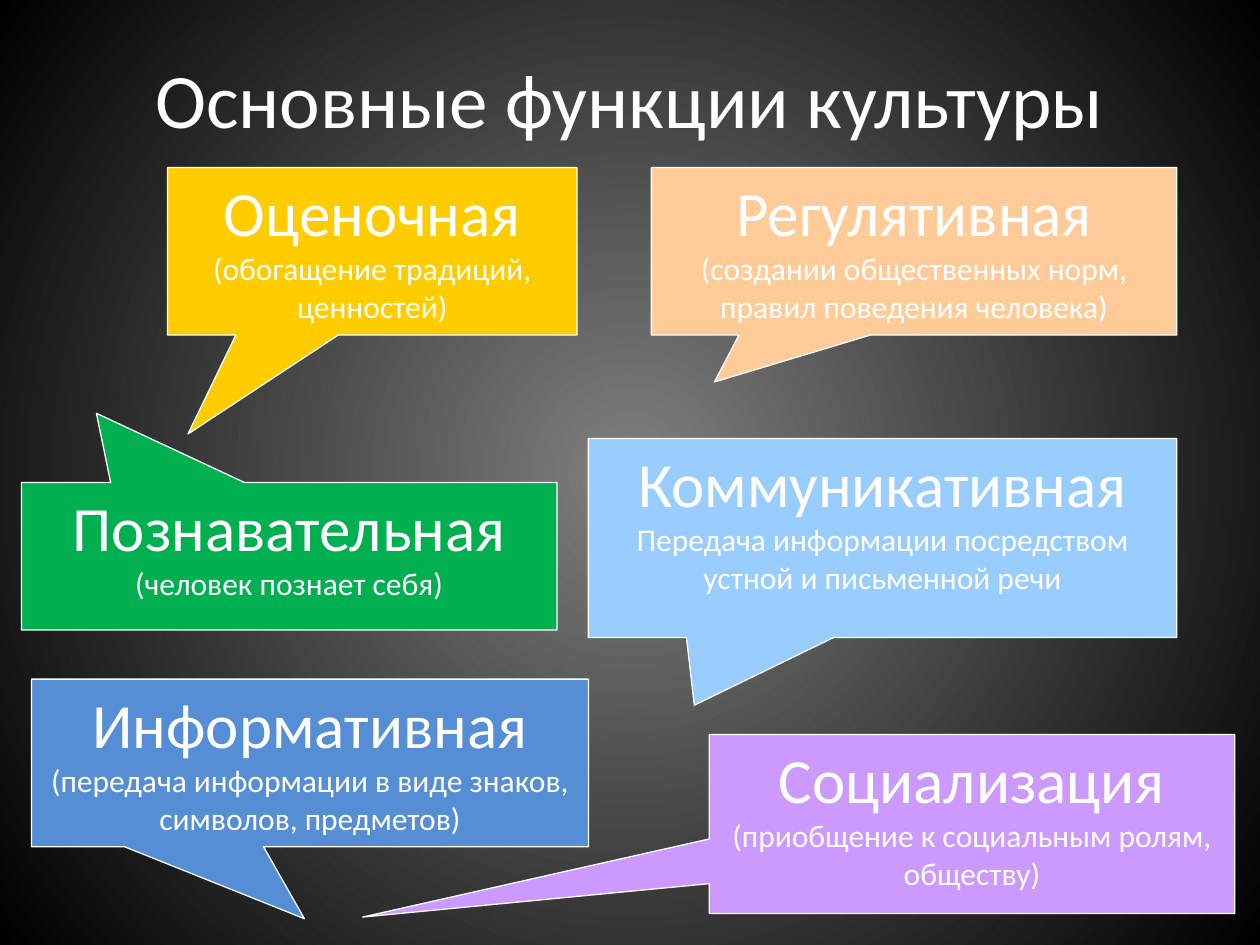
from dataclasses import dataclass

from lxml import etree
from pptx import Presentation
from pptx.dml.color import RGBColor as Rgb
from pptx.enum.shapes import MSO_SHAPE as Shape
from pptx.enum.text import MSO_ANCHOR as Anchor, PP_ALIGN as Align
from pptx.oxml import parse_xml
from pptx.oxml.ns import nsdecls, qn
from pptx.util import Inches, Pt


@dataclass(frozen=True)
class Theme:
    font: str = "Calibri"
    title: int = 44
    head: int = 36
    note: int = 18
    line: float = 0.75
    white: str = "FFFFFF"
    glow: str = "7F7F7F"
    edge: str = "000000"
    gold: str = "FFCC00"
    peach: str = "FFCC99"
    green: str = "00B050"
    sky: str = "99CCFF"
    blue: str = "558ED5"
    violet: str = "CC99FF"


class Deck:
    def __init__(self, theme, slide):
        self.theme = theme
        self.slide = slide

    def backdrop(self):
        """Radial gradient from the centre to the corners."""
        fill = self.slide.background.fill
        fill.gradient()
        tones = (self.theme.glow, self.theme.edge)
        for stop, tone, place in zip(fill.gradient_stops, tones, (0, 1)):
            stop.color.rgb = Rgb.from_string(tone)
            stop.position = place
        grad = self.slide.element.find(".//" + qn("a:gradFill"))
        ring = parse_xml(f'<a:path {nsdecls("a")} path="circle"/>')
        etree.SubElement(ring, qn("a:fillToRect"),
                         dict.fromkeys("ltrb", "50000"))
        grad.replace(grad.find(qn("a:lin")), ring)

    def label(self, frame, rows, anchor):
        """Fill a frame with one centred paragraph per (text, size)."""
        frame.word_wrap = True
        frame.vertical_anchor = anchor
        for i, (text, size) in enumerate(rows):
            para = frame.add_paragraph() if i else frame.paragraphs[0]
            para.alignment = Align.CENTER
            run = para.add_run()
            run.text = text
            style = {"name": self.theme.font, "size": Pt(size)}
            for key, value in style.items():
                setattr(run.font, key, value)
            run.font.color.rgb = Rgb.from_string(self.theme.white)

    def title(self, text, box):
        area = self.slide.shapes.add_textbox(*map(Inches, box))
        self.label(area.text_frame, [(text, self.theme.title)], Anchor.MIDDLE)

    def callout(self, head, note, box, tip, tone):
        """Speech box; tip is the pointer's offset from the centre."""
        shape = self.slide.shapes.add_shape(
            Shape.RECTANGULAR_CALLOUT, *map(Inches, box))
        shape.shadow.inherit = False
        for i, shift in enumerate(tip):
            shape.adjustments[i] = shift
        shape.fill.solid()
        shape.fill.fore_color.rgb = Rgb.from_string(tone)
        shape.line.color.rgb = Rgb.from_string(self.theme.white)
        shape.line.width = Pt(self.theme.line)
        rows = [(head, self.theme.head), (note, self.theme.note)]
        self.label(shape.text_frame, rows, Anchor.TOP)


def main():
    show = Presentation()
    show.slide_width, show.slide_height = Inches(10), Inches(7.5)
    theme = Theme()
    deck = Deck(theme, show.slides.add_slide(show.slide_layouts[6]))

    # Background and title
    deck.backdrop()
    deck.title("Основные функции культуры", (0.5, 0.3, 9, 0.95))

    # Functions of culture, from back to front
    parts = [
        ("Социализация", "(приобщение к социальным ролям, обществу)",
         (5.63, 5.83, 4.17, 1.42), (-1.16, 0.52), theme.violet),
        ("Познавательная", "(человек познает себя)",
         (0.17, 3.83, 4.25, 1.17), (-0.36, -0.97), theme.green),
        ("Информативная",
         "(передача информации в виде знаков, символов, предметов)",
         (0.25, 5.39, 4.42, 1.33), (-0.01, 0.93), theme.blue),
        ("Оценочная", "(обогащение традиций, ценностей)",
         (1.33, 1.33, 3.25, 1.33), (-0.45, 1.09), theme.gold),
        ("Коммуникативная",
         "Передача информации посредством устной и письменной речи",
         (4.67, 3.48, 4.67, 1.58), (-0.32, 0.84), theme.sky),
        ("Регулятивная",
         "(создании общественных норм, правил поведения человека)",
         (5.17, 1.33, 4.17, 1.33), (-0.38, 0.78), theme.peach),
    ]
    for part in parts:
        deck.callout(*part)

    show.save("out.pptx")


if __name__ == "__main__":
    main()
